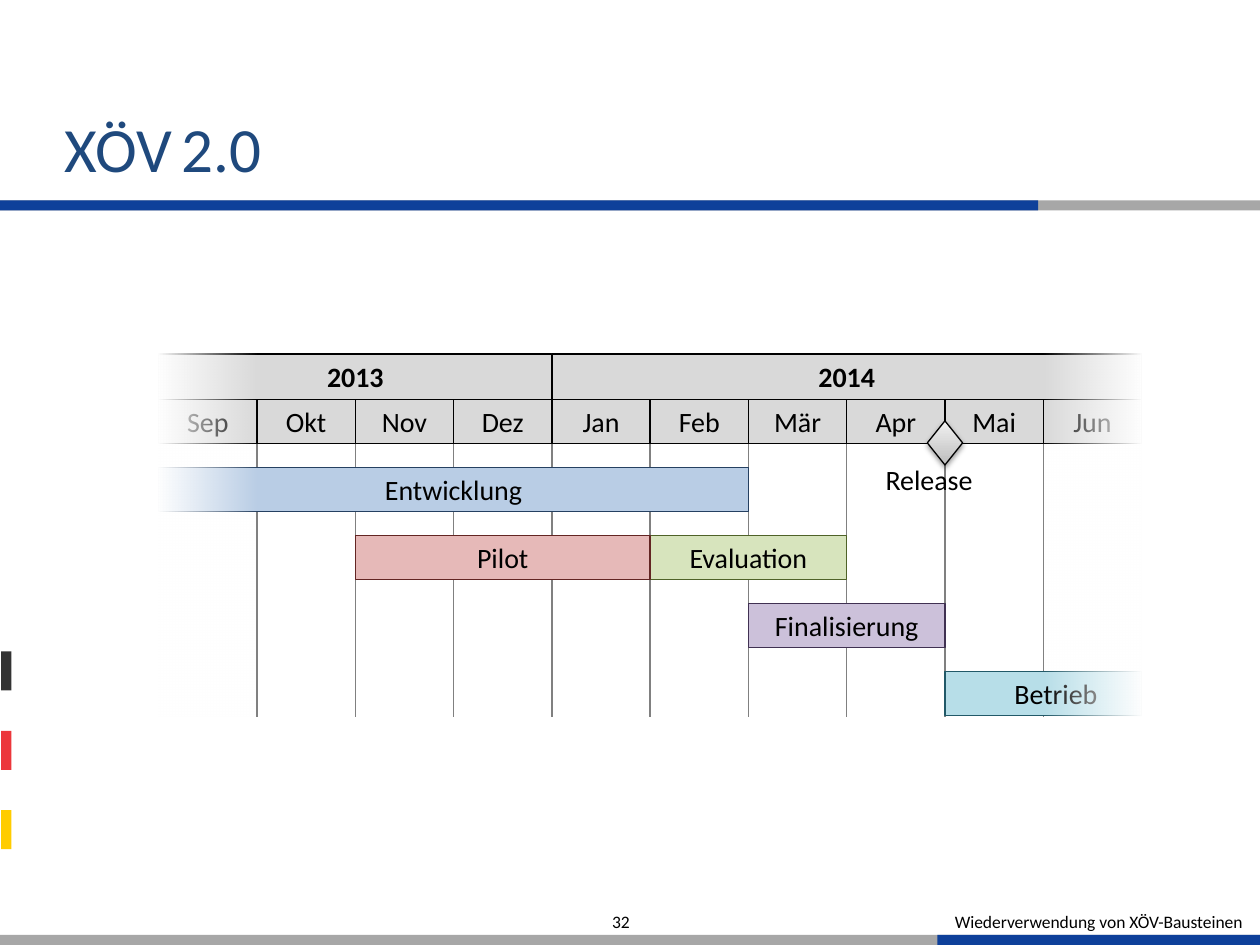
import pptx
import pptx.util
import pptx.dml.color
import pptx.enum.shapes
import pptx.enum.text
import pptx.oxml
import pptx.oxml.ns

Inches = pptx.util.Inches
Pt = pptx.util.Pt
RGBColor = pptx.dml.color.RGBColor
MSO_SHAPE = pptx.enum.shapes.MSO_SHAPE
MSO_ANCHOR = pptx.enum.text.MSO_ANCHOR
PP_ALIGN = pptx.enum.text.PP_ALIGN

FONT = "Calibri"
BLACK = RGBColor(0x00, 0x00, 0x00)
GRAY = RGBColor(0xA7, 0xA7, 0xA7)
BLUE = RGBColor(0x0E, 0x40, 0x9A)
TITLE_BLUE = RGBColor(0x1F, 0x49, 0x7D)
HEADER_GRAY = RGBColor(0xD9, 0xD9, 0xD9)
GRID_GRAY = RGBColor(0x80, 0x80, 0x80)

TITLE_RUNS = [("XÖV", 36), (" ", 24), ("2.0", 36)]
DECORATIONS = [
    (0, 7.42, 10, 0.08, GRAY),
    (0, 1.59, 10, 0.08, GRAY),
    (0, 1.59, 8.24, 0.08, BLUE),
    (0.01, 6.43, 0.08, 0.31, RGBColor(0xFF, 0xCC, 0x00)),
    (0.01, 5.8, 0.08, 0.31, RGBColor(0xEC, 0x36, 0x3B)),
    (0.01, 5.17, 0.08, 0.31, RGBColor(0x33, 0x33, 0x33)),
    (7.44, 7.42, 2.56, 0.08, BLUE),
]
MONTHS = ["Sep", "Okt", "Nov", "Dez", "Jan", "Feb", "Mär", "Apr", "Mai", "Jun"]
YEARS = [("2013", 0, 4), ("2014", 4, 10)]
PHASES = [
    ("Entwicklung", 0, 6, 0, RGBColor(0xB9, 0xCD, 0xE5), RGBColor(0x25, 0x40, 0x61)),
    ("Evaluation", 5, 7, 1, RGBColor(0xD7, 0xE4, 0xBD), RGBColor(0x4F, 0x62, 0x28)),
    ("Pilot", 2, 5, 1, RGBColor(0xE6, 0xB9, 0xB8), RGBColor(0x63, 0x25, 0x23)),
    ("Finalisierung", 6, 8, 2, RGBColor(0xCC, 0xC1, 0xDA), RGBColor(0x40, 0x31, 0x52)),
    ("Betrieb", 8, 10, 3, RGBColor(0xB7, 0xDE, 0xE8), RGBColor(0x21, 0x59, 0x68)),
]
RELEASE_MONTH = 8

CHART_LEFT, CHART_TOP, CHART_BOTTOM = 1.26, 2.81, 5.69
MONTH_WIDTH = 0.78
YEAR_HEIGHT, BAR_HEIGHT = 0.36, 0.35
MONTH_TOP = CHART_TOP + YEAR_HEIGHT
PHASE_TOP, PHASE_PITCH = 3.71, 0.54

presentation = pptx.Presentation()
presentation.slide_width, presentation.slide_height = Inches(10), Inches(7.5)
slide = presentation.slides.add_slide(presentation.slide_layouts[5])


def month_x(month):
    return CHART_LEFT + month * MONTH_WIDTH


def add_run(paragraph, text, size, color=BLACK, bold=False):
    run = paragraph.add_run()
    run.text = text
    run.font.name, run.font.size, run.font.bold = FONT, Pt(size), bold
    run.font.color.rgb = color


def add_box(left, top, width, height, fill=None, line=None, kind=MSO_SHAPE.RECTANGLE):
    shape = slide.shapes.add_shape(kind, Inches(left), Inches(top), Inches(width), Inches(height))
    shape.shadow.inherit = False
    if fill is not None:
        shape.fill.solid()
        shape.fill.fore_color.rgb = fill
    if line is None:
        shape.line.fill.background()
    else:
        shape.line.color.rgb = line
        shape.line.width = Pt(0.75)
    return shape


def add_bar(text, start, end, top, height, fill, line, bold=False):
    shape = add_box(month_x(start), top, (end - start) * MONTH_WIDTH, height, fill, line)
    shape.text_frame.vertical_anchor = MSO_ANCHOR.MIDDLE
    paragraph = shape.text_frame.paragraphs[0]
    paragraph.alignment = PP_ALIGN.CENTER
    add_run(paragraph, text, 16, bold=bold)
    return shape


def add_label(text, left, top, width, height, size, anchor, alignment, wrap=True):
    box = slide.shapes.add_textbox(Inches(left), Inches(top), Inches(width), Inches(height))
    box.text_frame.word_wrap = wrap
    box.text_frame.vertical_anchor = anchor
    paragraph = box.text_frame.paragraphs[0]
    paragraph.alignment = alignment
    add_run(paragraph, text, size)


def set_gradient(shape, stops, angle):
    namespace = pptx.oxml.ns.nsdecls("a")
    stop_xml = "".join(
        f'<a:gs pos="{position * 1000}"><a:srgbClr val="{color}">'
        f'<a:alpha val="{alpha * 1000}"/></a:srgbClr></a:gs>'
        for position, color, alpha in stops
    )
    gradient = pptx.oxml.parse_xml(
        f'<a:gradFill {namespace} rotWithShape="1"><a:gsLst>{stop_xml}</a:gsLst>'
        f'<a:lin ang="{angle * 60000}" scaled="0"/></a:gradFill>'
    )
    shape._element.spPr.find(pptx.oxml.ns.qn("a:prstGeom")).addnext(gradient)


def add_shadow(shape):
    effects = shape._element.spPr.find(pptx.oxml.ns.qn("a:effectLst"))
    effects.append(pptx.oxml.parse_xml(
        f'<a:outerShdw {pptx.oxml.ns.nsdecls("a")} blurRad="{Pt(3.1)}" dist="{Pt(1.6)}" '
        'dir="5400000" rotWithShape="0"><a:srgbClr val="000000">'
        '<a:alpha val="38000"/></a:srgbClr></a:outerShdw>'
    ))


for left, top, width, height, color in DECORATIONS:
    add_box(left, top, width, height, color)

title = slide.shapes.title
title.left, title.top, title.width, title.height = map(Inches, (0.51, 0.3, 7.72, 1.17))
frame = title.text_frame
frame.margin_left = frame.margin_top = frame.margin_right = frame.margin_bottom = 0
frame.vertical_anchor = MSO_ANCHOR.BOTTOM
frame.auto_size = pptx.enum.text.MSO_AUTO_SIZE.NONE
frame.paragraphs[0].alignment = PP_ALIGN.LEFT
for text, size in TITLE_RUNS:
    add_run(frame.paragraphs[0], text, size, TITLE_BLUE)

add_label("Wiederverwendung von XÖV-Bausteinen", 7.44, 7.12, 2.56, 0.38, 10,
          MSO_ANCHOR.MIDDLE, PP_ALIGN.CENTER)
add_label("32", 4.76, 7.12, 1.86, 0.38, 10, MSO_ANCHOR.MIDDLE, PP_ALIGN.LEFT)

for month in range(1, len(MONTHS)):
    x = Inches(month_x(month))
    grid_line = slide.shapes.add_connector(
        pptx.enum.shapes.MSO_CONNECTOR.STRAIGHT, x, Inches(3.27), x, Inches(CHART_BOTTOM))
    grid_line.line.color.rgb = GRID_GRAY
    grid_line.line.width = Pt(0.75)
    grid_line._element.spPr.append(
        pptx.oxml.parse_xml(f'<a:effectLst {pptx.oxml.ns.nsdecls("a")}/>'))

for text, start, end, row, fill, line in PHASES:
    bar = add_bar(text, start, end, PHASE_TOP + row * PHASE_PITCH, BAR_HEIGHT, fill, line)
    if text == "Betrieb":
        bar.text_frame.margin_left = Inches(0.3)

add_label("Release", 6.93, 3.62, 1.06, 0.37, 16, MSO_ANCHOR.TOP, PP_ALIGN.LEFT, wrap=False)

for month, text in enumerate(MONTHS):
    add_bar(text, month, month + 1, MONTH_TOP, BAR_HEIGHT, HEADER_GRAY, BLACK)
for text, start, end in YEARS:
    add_bar(text, start, end, CHART_TOP, YEAR_HEIGHT, HEADER_GRAY, BLACK, bold=True)

milestone = add_box(month_x(RELEASE_MONTH) - 0.14, 3.34, 0.28, 0.35,
                    line=BLACK, kind=MSO_SHAPE.DIAMOND)
set_gradient(milestone, [(0, "BDBDBD", 100), (100, "F2F2F2", 100)], 270)
add_shadow(milestone)

for month, angle in [(0, 180), (len(MONTHS) - 1, 0)]:
    fade = add_box(month_x(month), CHART_TOP, MONTH_WIDTH, CHART_BOTTOM - CHART_TOP)
    set_gradient(fade, [(0, "FFFFFF", 0), (100, "FFFFFF", 100)], angle)

presentation.save("out.pptx")
